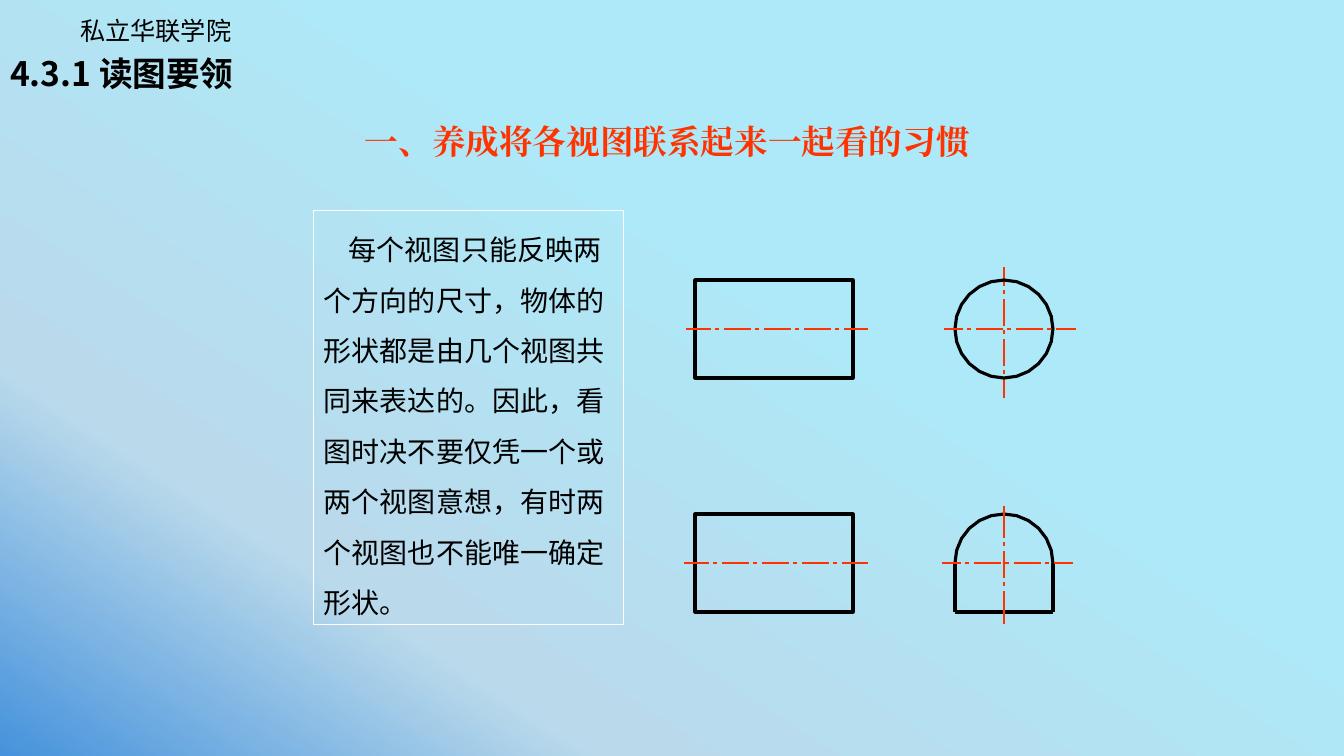
from math import cos, pi, sin

from lxml import etree
from pptx import Presentation
from pptx.dml.color import RGBColor
from pptx.enum.shapes import MSO_CONNECTOR, MSO_SHAPE
from pptx.enum.text import MSO_ANCHOR, MSO_AUTO_SIZE, PP_ALIGN
from pptx.oxml.ns import qn
from pptx.util import Pt

STRAIGHT = MSO_CONNECTOR.STRAIGHT
RECTANGLE = MSO_SHAPE.RECTANGLE
TOP = MSO_ANCHOR.TOP
LEFT = PP_ALIGN.LEFT
FIT_SHAPE = MSO_AUTO_SIZE.SHAPE_TO_FIT_TEXT

BLACK = RGBColor(0x00, 0x00, 0x00)
WHITE = RGBColor(0xFF, 0xFF, 0xFF)
RED = RGBColor(0xFF, 0x33, 0x00)
BACKGROUND_STOPS = [
    (0, RGBColor(0x46, 0x92, 0xDC)),
    (24, RGBColor(0xBA, 0xDA, 0xEB)),
    (62, RGBColor(0xAD, 0xE9, 0xF8)),
]

SANS_JP = "Noto Sans CJK JP"
SANS_SC = "Noto Sans CJK SC"
SERIF = "Times New Roman"

SCALE = 12192000 / 1344
OUTLINE = Pt(2.25)
HAIRLINE = 0
RADIUS = 49
ARC_STEP = pi / 12


def px(value):
    return round(value * SCALE)


def paint_background(slide):
    fill = slide.background.fill
    fill.gradient()
    fill.gradient_angle = 57
    stops = slide.element.find(".//" + qn("a:gsLst"))
    for stop in list(stops):
        stops.remove(stop)
    for percent, color in BACKGROUND_STOPS:
        stop = etree.SubElement(stops, qn("a:gs"), pos=str(percent * 1000))
        etree.SubElement(stop, qn("a:srgbClr"), val=str(color))


def write_text(box, text, font_name, size, color=BLACK, bold=False, wrap=True):
    frame = box.text_frame
    frame.word_wrap = wrap
    frame.auto_size = FIT_SHAPE
    frame.vertical_anchor = TOP
    paragraph = frame.paragraphs[0]
    paragraph.alignment = LEFT
    run = paragraph.add_run()
    run.text = text
    run.font.name = font_name
    run.font.size = Pt(size)
    run.font.bold = bold
    run.font.color.rgb = color
    properties = run.font._element
    properties.set("lang", "zh-CN")
    east_asian = etree.Element(qn("a:ea"), typeface=font_name)
    properties.find(qn("a:latin")).addnext(east_asian)
    return paragraph


def add_text(slide, left, top, width, height, *text, **style):
    box = slide.shapes.add_textbox(px(left), px(top), px(width), px(height))
    return box, write_text(box, *text, **style)


def add_title(slide, left, top, width, height, text):
    title = slide.shapes.title
    title.left, title.top = px(left), px(top)
    title.width, title.height = px(width), px(height)
    paragraph = write_text(title, text, SANS_SC, 24, bold=True, wrap=False)
    paragraph.line_spacing = 1.0
    paragraph.space_before = Pt(0)


def add_explanation(slide, text):
    box, paragraph = add_text(slide, 314, 211, 310, 414, text, SANS_SC, 20)
    box.line.color.rgb = WHITE
    box.line.width = Pt(0.75)
    paragraph.line_spacing = 1.5
    paragraph._p.get_or_add_pPr().set("indent", str(px(25)))


def add_line(view, x1, y1, x2, y2, color=BLACK, width=OUTLINE):
    line = view.shapes.add_connector(STRAIGHT, px(x1), px(y1), px(x2), px(y2))
    line.line.color.rgb = color
    line.line.width = width
    etree.SubElement(line._element.spPr, qn("a:effectLst"))


def dash_spans(start, end, first):
    position = start + first
    yield start, position
    periods = round((end - position) / 40)
    for period in range(1, periods + 1):
        yield position + 4, position + 8
        dash_end = end if period == periods else position + 40
        yield position + 13, dash_end
        position = dash_end


def add_horizontal_axis(view, y, start, end, first):
    for x1, x2 in dash_spans(start, end, first):
        add_line(view, x1, y, x2, y, RED, HAIRLINE)


def add_vertical_axis(view, x, start, end, first):
    for y1, y2 in dash_spans(start, end, first):
        add_line(view, x, y1, x, y2, RED, HAIRLINE)


def style_outline(outline):
    outline.shadow.inherit = False
    outline.fill.background()
    outline.line.color.rgb = BLACK
    outline.line.width = OUTLINE


def add_front_view(slide, axis_y, axis_start):
    view = slide.shapes.add_group_shape()
    outline = view.shapes.add_shape(
        RECTANGLE, px(695), px(axis_y - RADIUS), px(158), px(2 * RADIUS))
    style_outline(outline)
    add_horizontal_axis(view, axis_y, axis_start, 868, 25)


def add_arc(view, center_x, center_y, steps, close):
    points = [(px(center_x + RADIUS * cos(step * ARC_STEP)),
               px(center_y - RADIUS * sin(step * ARC_STEP)))
              for step in range(steps)]
    builder = view.shapes.build_freeform(*points[0], scale=1.0)
    builder.add_line_segments(points[1:], close=close)
    style_outline(builder.convert_to_shape())


def add_circle_view(slide, center_x, center_y):
    view = slide.shapes.add_group_shape()
    add_vertical_axis(view, center_x, 267, 398, 19)
    add_arc(view, center_x, center_y, 24, True)
    add_horizontal_axis(view, center_y, 944, 1076, 19)


def add_arch_view(slide, center_x, center_y):
    view = slide.shapes.add_group_shape()
    left, right = center_x - RADIUS, center_x + RADIUS
    bottom = center_y + RADIUS
    add_arc(view, center_x, center_y, 13, False)
    for side in (left, right):
        add_line(view, side, center_y, side, bottom)
    add_line(view, left, bottom, right, bottom)
    add_vertical_axis(view, center_x, 506, 624, 32)
    add_horizontal_axis(view, center_y, 942, 1073, 19)


def main():
    presentation = Presentation()
    presentation.slide_width = px(1344)
    presentation.slide_height = px(756)
    slide = presentation.slides.add_slide(presentation.slide_layouts[5])
    paint_background(slide)

    school, _ = add_text(slide, 75, 10, 296, 40, "私立华联学院", SANS_JP, 18)
    frame = school.text_frame
    frame.margin_left = frame.margin_right = px(5)
    frame.margin_top = frame.margin_bottom = px(5)
    add_title(slide, 0, 48, 260, 50, "4.3.1 读图要领")
    add_text(slide, 355, 116, 628, 50, "一、养成将各视图联系起来一起看的习惯",
             SERIF, 24, color=RED, bold=True, wrap=False)
    add_explanation(
        slide,
        "每个视图只能反映两个方向的尺寸，物体的形状都是由几个视图共同来表达的。"
        "因此，看图时决不要仅凭一个或两个视图意想，有时两个视图也不能唯一确定形状。")

    add_front_view(slide, 329, 686)
    add_front_view(slide, 563, 684)
    add_circle_view(slide, 1004, 329)
    add_arch_view(slide, 1004, 563)
    presentation.save("out.pptx")


if __name__ == "__main__":
    main()
